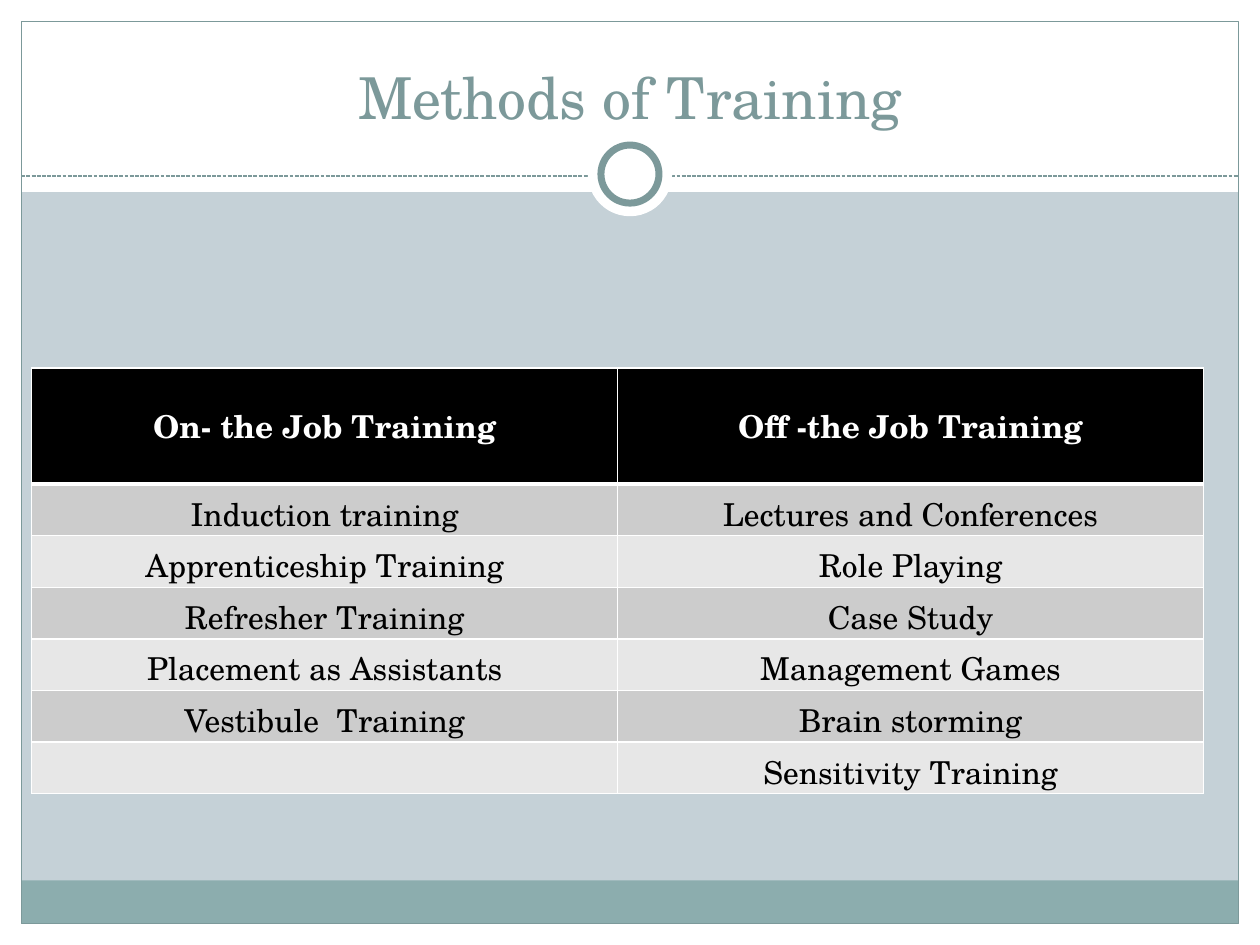
from pptx import Presentation
from pptx.dml.color import RGBColor
from pptx.enum.dml import MSO_LINE
from pptx.enum.shapes import MSO_CONNECTOR, MSO_SHAPE
from pptx.enum.text import MSO_ANCHOR as Anchor, PP_ALIGN as Align
from pptx.oxml.ns import qn
from pptx.util import Cm, Pt
from lxml.etree import SubElement

WHITE = RGBColor(0xFF, 0xFF, 0xFF)
BLACK = RGBColor(0x00, 0x00, 0x00)
BACKGROUND = RGBColor(0xC5, 0xD1, 0xD7)
TEAL = RGBColor(0x7C, 0x99, 0x9A)
LIGHT_TEAL = RGBColor(0x8C, 0xAD, 0xAE)
BANDS = (RGBColor(0xCC, 0xCC, 0xCC), RGBColor(0xE7, 0xE7, 0xE7))

WIDTH, HEIGHT, MARGIN = 25.4, 19.05, 0.43
INNER_WIDTH = WIDTH - 2 * MARGIN
RING_CENTER = (WIDTH / 2, 3.51)

ROWS = (
    ("On- the Job Training", "Off -the Job Training"),
    ("Induction training", "Lectures and Conferences"),
    ("Apprenticeship Training", "Role Playing"),
    ("Refresher Training", "Case Study"),
    ("Placement as Assistants", "Management Games"),
    ("Vestibule  Training", "Brain storming"),
    ("", "Sensitivity Training"),
)


def write_text(frame, text, *, size=18, color=BLACK, bold=False,
               font="TeX Gyre Schola", align=Align.CENTER):
    paragraph = frame.paragraphs[0]
    paragraph.alignment = align
    if not text:
        return
    run = paragraph.add_run()
    run.text = text
    run.font.name = font
    run.font.size = Pt(size)
    run.font.bold = bold
    run.font.color.rgb = color


def set_border(cell, side, points):
    border = SubElement(cell._tc.get_or_add_tcPr(), qn(f"a:ln{side}"), w=str(Pt(points)))
    fill = SubElement(border, qn("a:solidFill"))
    SubElement(fill, qn("a:srgbClr"), val=str(WHITE))


class SlideBuilder:
    def __init__(self, slide, line_color=TEAL, line_width=0.75):
        self.slide = slide
        self.line_color = line_color
        self.line_width = line_width

    def shape(self, left, top, width, height, *, fill=None, line=0,
              kind=MSO_SHAPE.RECTANGLE):
        shape = self.slide.shapes.add_shape(kind, Cm(left), Cm(top), Cm(width), Cm(height))
        shape.shadow.inherit = False
        if fill is None:
            shape.fill.background()
        else:
            shape.fill.solid()
            shape.fill.fore_color.rgb = fill
        if line:
            shape.line.color.rgb = self.line_color
            shape.line.width = Pt(line)
        else:
            shape.line.fill.background()

    def circle(self, center, diameter, **style):
        left, top = (value - diameter / 2 for value in center)
        self.shape(left, top, diameter, diameter, kind=MSO_SHAPE.OVAL, **style)

    def dashed_line(self, left, right, y):
        line = self.slide.shapes.add_connector(
            MSO_CONNECTOR.STRAIGHT, Cm(left), Cm(y), Cm(right), Cm(y))
        line.line.color.rgb = self.line_color
        line.line.width = Pt(self.line_width)
        line.line.dash_style = MSO_LINE.SQUARE_DOT
        SubElement(line._element.spPr, qn("a:effectLst"))

    def title(self, text, left, top, width, height):
        box = self.slide.shapes.add_textbox(Cm(left), Cm(top), Cm(width), Cm(height))
        frame = box.text_frame
        frame.word_wrap = True
        frame.vertical_anchor = Anchor.BOTTOM
        write_text(frame, text, size=33, color=self.line_color)

    def table(self, rows, left, top, width, header_height, row_height):
        height = header_height + row_height * (len(rows) - 1)
        table = self.slide.shapes.add_table(
            len(rows), len(rows[0]), Cm(left), Cm(top), Cm(width), Cm(height)).table
        table.first_row = table.horz_banding = False
        for index, texts in enumerate(rows):
            header = index == 0
            table.rows[index].height = Cm(header_height if header else row_height)
            for column, text in enumerate(texts):
                cell = table.cell(index, column)
                cell.vertical_anchor = Anchor.MIDDLE
                for side in "LRTB":
                    thick = (side == "B" and header) or (side == "T" and index == 1)
                    set_border(cell, side, 3 if thick else 1)
                cell.fill.solid()
                cell.fill.fore_color.rgb = BLACK if header else BANDS[(index - 1) % 2]
                write_text(cell.text_frame, text, bold=header,
                           color=WHITE if header else BLACK)


def main():
    presentation = Presentation()
    presentation.slide_width, presentation.slide_height = Cm(WIDTH), Cm(HEIGHT)
    slide = presentation.slides.add_slide(presentation.slide_layouts[6])
    slide.background.fill.solid()
    slide.background.fill.fore_color.rgb = BACKGROUND
    builder = SlideBuilder(slide)

    # White margins and title band
    builder.shape(0, HEIGHT - MARGIN, WIDTH, MARGIN, fill=WHITE)
    builder.shape(0, 0, WIDTH, 3.87, fill=WHITE)
    for left in (0, WIDTH - MARGIN):
        builder.shape(left, 0, MARGIN, HEIGHT, fill=WHITE)

    # Footer band, frame and divider
    builder.shape(MARGIN, 17.75, INNER_WIDTH, 0.87, fill=LIGHT_TEAL)
    builder.shape(MARGIN, MARGIN, INNER_WIDTH, HEIGHT - 2 * MARGIN, line=0.75)
    builder.dashed_line(MARGIN, WIDTH - MARGIN, 3.55)

    # Ring on the divider
    builder.circle(RING_CENTER, 1.7, fill=WHITE)
    builder.circle(RING_CENTER, 1.17, fill=WHITE, line=4)

    # Title and table
    builder.title("Methods of Training", 0.85, 0.64, 23.7, 2.12)
    builder.table(ROWS, 0.64, 7.42, 23.62, header_height=2.34, row_height=1.04)

    presentation.save("out.pptx")


if __name__ == "__main__":
    main()
